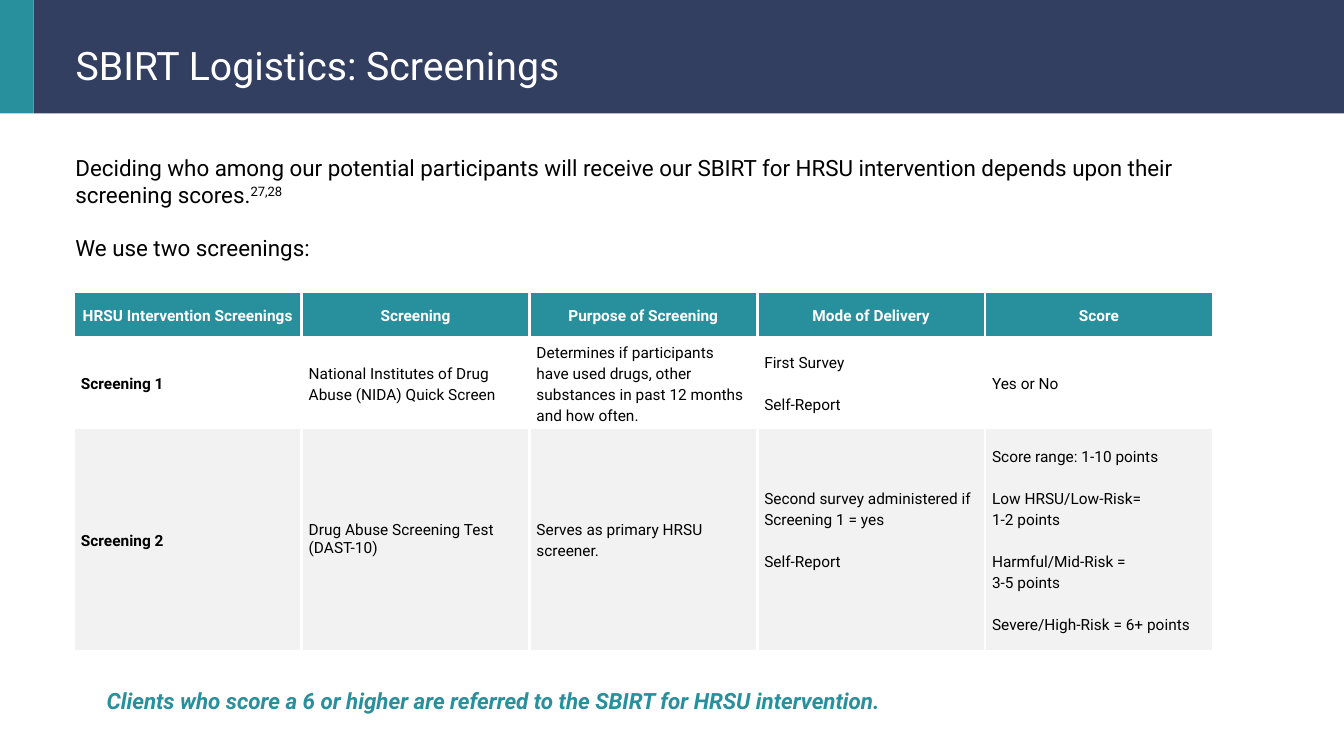
"""Build the SBIRT screenings slide with its table of two screenings."""
from lxml.etree import SubElement
from pptx import Presentation
from pptx.dml.color import RGBColor as Color
from pptx.enum.shapes import MSO_SHAPE as Preset
from pptx.enum.text import MSO_ANCHOR as Anchor, MSO_AUTO_SIZE as AutoSize, PP_ALIGN as Align
from pptx.oxml.ns import qn
from pptx.util import Inches, Pt

THEME = {
    "font": "Roboto",
    "navy": Color.from_string("323F61"),
    "teal": Color.from_string("288F9C"),
    "grey": Color.from_string("F2F2F2"),
    "white": Color.from_string("FFFFFF"),
    "black": Color.from_string("000000"),
    "title": Pt(28),
    "body": Pt(16),
    "cell": Pt(11),
    "leading": Pt(15),
}
COLUMNS, ROWS = 40, 20
HEADER_ROWS = 3

presentation = Presentation()
presentation.slide_width, presentation.slide_height = Inches(13.33), Inches(7.5)
column, row = presentation.slide_width / COLUMNS, presentation.slide_height / ROWS
slide = presentation.slides.add_slide(presentation.slide_layouts[5])


def grid(left, top, width, height):
    """Turn grid columns and rows into lengths."""
    return int(left * column), int(top * row), int(width * column), int(height * row)


def style(paragraph, size, color, paragraph_format=None, **font_format):
    """Format a paragraph and the font of its runs."""
    for name, value in {"alignment": Align.LEFT, **(paragraph_format or {})}.items():
        setattr(paragraph, name, value)
    for run in paragraph.runs:
        run.font.color.rgb = THEME[color]
        for name, value in {"name": THEME["font"], "size": THEME[size], **font_format}.items():
            setattr(run.font, name, value)


for left, width, color in ((1, COLUMNS - 1, "navy"), (0, 1, "teal")):
    band = slide.shapes.add_shape(Preset.RECTANGLE, *grid(left, 0, width, HEADER_ROWS))
    band.shadow.inherit = False
    band.fill.solid()
    band.fill.fore_color.rgb = THEME[color]
    band.line.fill.background()

title = slide.shapes.title
slide.shapes.element.append(title.element)
title.left, title.top, title.width, title.height = grid(1.95, 0.96, 33.4, 1.52)
body = slide.shapes.add_textbox(*grid(1.95, 3.95, 36, 3.15))
note = slide.shapes.add_textbox(*grid(2.88, 18.21, 36, 0.88))
texts = (
    (title, "SBIRT Logistics: Screenings"),
    (body, "Deciding who among our potential participants will receive our SBIRT for HRSU "
           "intervention depends upon their screening scores.\nWe use two screenings:"),
    (note, "Clients who score a 6 or higher are referred to the SBIRT for HRSU intervention."),
)
frame_format = {"word_wrap": True, "auto_size": AutoSize.SHAPE_TO_FIT_TEXT,
                "vertical_anchor": Anchor.TOP}
for shape, text in texts:
    shape.text_frame.text = text
    for name, value in frame_format.items():
        setattr(shape.text_frame, name, value)

style(title.text_frame.paragraphs[0], "title", "white")
statement, lead_in = body.text_frame.paragraphs
citation = statement.add_run()
citation.text = "27,28"
citation.font._element.set("baseline", "30000")
style(statement, "body", "black")
style(lead_in, "body", "black", {"space_before": Pt(19)})
style(note.text_frame.paragraphs[0], "body", "teal", {"line_spacing": THEME["leading"]},
      bold=True, italic=True)

screenings = (
    ("HRSU Intervention Screenings", "Screening", "Purpose of Screening",
     "Mode of Delivery", "Score"),
    ("Screening 1", "National Institutes of Drug Abuse (NIDA) Quick Screen",
     "Determines if participants have used drugs, other substances in past 12 months "
     "and how often.",
     "First Survey\nSelf-Report", "Yes or No"),
    ("Screening 2", "Drug Abuse Screening Test (DAST-10)",
     "Serves as primary HRSU screener.",
     "Second survey administered if Screening 1 = yes\nSelf-Report",
     "Score range: 1-10 points\nLow HRSU/Low-Risk=\v1-2 points\n"
     "Harmful/Mid-Risk =\v3-5 points\nSevere/High-Risk = 6+ points"),
)
row_heights = (1.2, 2.4, 5.87)
row_fills = ("teal", "white", "grey")
last = len(screenings[0]) - 1
table = slide.shapes.add_table(len(screenings), last + 1,
                               *grid(2.2, 7.73, 33.9, sum(row_heights))).table
table.horz_banding = False

for row_index, (texts, height, fill) in enumerate(zip(screenings, row_heights, row_fills)):
    table.rows[row_index].height = int(height * row)
    header = row_index == 0
    for column_index, text in enumerate(texts):
        cell = table.cell(row_index, column_index)
        cell.text_frame.text = text
        cell_format = {"vertical_anchor": Anchor.MIDDLE, "margin_left": Inches(0.07),
                       "margin_right": Inches(0.07), "margin_top": 0, "margin_bottom": 0}
        for name, value in cell_format.items():
            setattr(cell, name, value)
        cell.fill.solid()
        cell.fill.fore_color.rgb = THEME[fill]
        borders = {"a:lnL": 2.25 if column_index else 1,
                   "a:lnR": 2.25 if column_index < last else 1,
                   "a:lnT": 1, "a:lnB": 3 if header else 1}
        properties = cell._tc.get_or_add_tcPr()
        for position, (tag, points) in enumerate(borders.items()):
            border = SubElement(properties, qn(tag), w=str(Pt(points)))
            solid = SubElement(border, qn("a:solidFill"))
            SubElement(solid, qn("a:srgbClr"), val=str(THEME["white"]))
            properties.insert(position, border)
        for index, paragraph in enumerate(cell.text_frame.paragraphs):
            style(paragraph, "cell", "white" if header else "black",
                  {"alignment": Align.CENTER if header else Align.LEFT,
                   "line_spacing": THEME["leading"],
                   "space_before": THEME["leading"] if index else 0},
                  bold=header or column_index == 0)

table.cell(2, 1).text_frame.paragraphs[0].line_spacing = 1.0
table.cell(2, 3).margin_bottom = THEME["leading"]

presentation.save("out.pptx")
